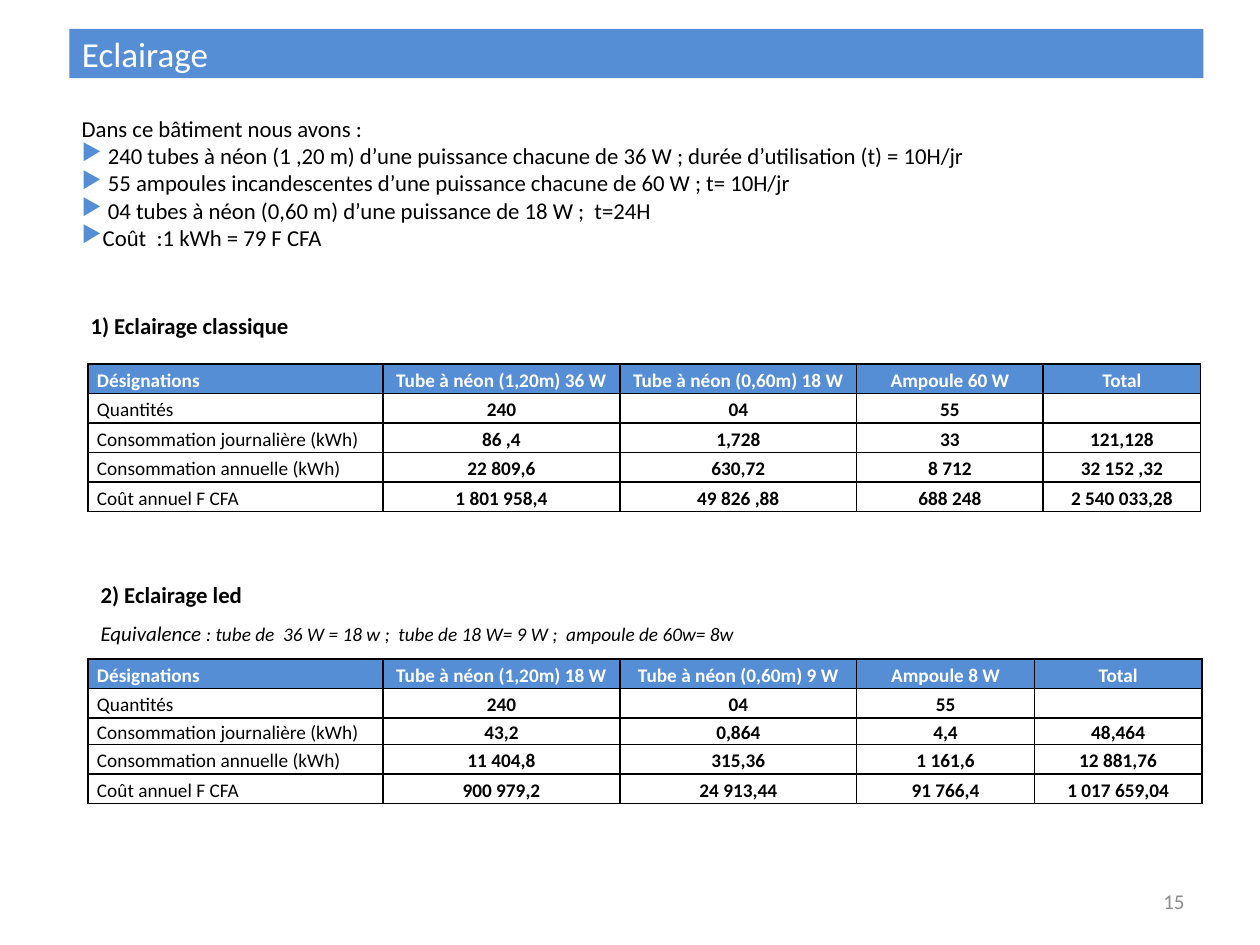
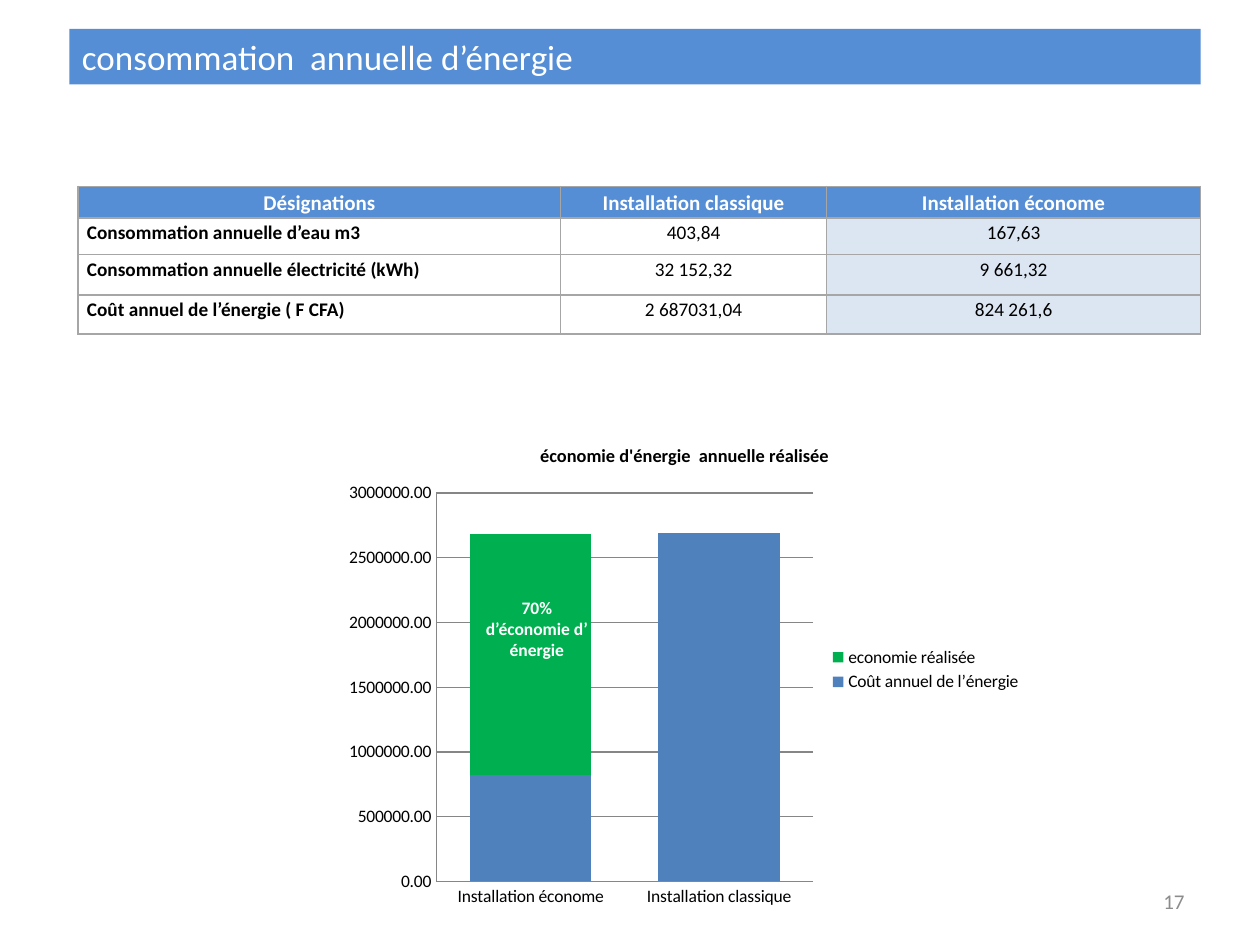
from lxml.etree import SubElement
from pptx import Presentation
from pptx.chart.data import CategoryChartData
from pptx.dml.color import RGBColor
from pptx.enum.chart import XL_CHART_TYPE, XL_LEGEND_POSITION, XL_TICK_MARK
from pptx.enum.text import MSO_ANCHOR, MSO_AUTO_SIZE, PP_ALIGN
from pptx.oxml.ns import qn
from pptx.util import Inches, Pt

FONT = "Calibri"
COLORS = {
    "band": "558ED5", "pale": "DCE6F2", "white": "FFFFFF", "black": "000000",
    "number": "8C8C8C", "border": "A6A6A6", "grid": "868686",
    "cost": "4F81BD", "saving": "00B050",
}

LABELS = ["Quantités", "Consommation journalière (kWh)",
          "Consommation annuelle (kWh)", "Coût annuel F CFA"]
CLASSIC = [
    ["Désignations", "Tube à néon (1,20m) 36 W", "Tube à néon (0,60m) 18 W",
     "Ampoule 60 W", "Total"],
    [LABELS[0], "240", "04", "55", ""],
    [LABELS[1], "86 ,4", "1,728", "33", "121,128"],
    [LABELS[2], "22 809,6", "630,72", "8 712", "32 152 ,32"],
    [LABELS[3], "1 801 958,4", "49 826 ,88", "688 248", "2 540 033,28"],
]
LED = [
    ["Désignations", "Tube à néon (1,20m) 18 W", "Tube à néon (0,60m) 9 W",
     "Ampoule 8 W", "Total"],
    [LABELS[0], "240", "04", "55", ""],
    [LABELS[1], "43,2", "0,864", "4,4", "48,464"],
    [LABELS[2], "11 404,8", "315,36", "1 161,6", "12 881,76"],
    [LABELS[3], "900 979,2", "24 913,44", "91 766,4", "1 017 659,04"],
]
ANNUAL = [
    ["Désignations", "Installation classique", "Installation économe"],
    ["Consommation annuelle d’eau m3", "403,84", "167,63"],
    ["Consommation annuelle électricité (kWh)", "32 152,32", "9 661,32"],
    ["Coût annuel de l’énergie ( F CFA)", "2 687031,04", "824 261,6"],
]
EQUIPMENT = [
    " 240 tubes à néon (1 ,20 m) d’une puissance chacune de 36 W ; durée d’utilisation (t) = 10H/jr",
    " 55 ampoules incandescentes d’une puissance chacune de 60 W ; t= 10H/jr",
    " 04 tubes à néon (0,60 m) d’une puissance de 18 W ;  t=24H",
    "Coût  :1 kWh = 79 F CFA",
]


def rgb(name):
    return RGBColor.from_string(COLORS[name])


def set_font(font, size, color="black", bold=False, italic=False):
    font.name, font.size = FONT, Pt(size)
    font.bold, font.italic = bold, italic
    font.color.rgb = rgb(color)


def add_run(p, text, size, color="black", bold=False, italic=False):
    r = p.add_run()
    r.text = text
    set_font(r.font, size, color, bold, italic)


def add_text(s, x, y, w, h, anchor=MSO_ANCHOR.TOP):
    """Add a wrapping text box and return its text frame."""
    tf = s.shapes.add_textbox(Inches(x), Inches(y), Inches(w), Inches(h)).text_frame
    tf.word_wrap = True
    tf.vertical_anchor = anchor
    return tf


def add_titled_slide(prs, title, number, w, h):
    s = prs.slides.add_slide(prs.slide_layouts[5])
    sp = s.shapes.title
    sp.left, sp.top, sp.width, sp.height = Inches(0.55), Inches(0.23), Inches(w), Inches(h)
    sp.fill.solid()
    sp.fill.fore_color.rgb = rgb("band")
    tf = sp.text_frame
    tf.auto_size = MSO_AUTO_SIZE.NONE
    tf.vertical_anchor = MSO_ANCHOR.MIDDLE
    p = tf.paragraphs[0]
    p.alignment = PP_ALIGN.LEFT
    add_run(p, title, 20, "white")

    p = add_text(s, 7.17, 6.95, 2.33, 0.4, MSO_ANCHOR.MIDDLE).paragraphs[0]
    p.alignment = PP_ALIGN.RIGHT
    add_run(p, number, 12, "number")
    return s


def add_bullet(p):
    pPr = p._p.get_or_add_pPr()
    color = SubElement(pPr, qn("a:buClr"))
    SubElement(color, qn("a:srgbClr"), val=COLORS["band"])
    SubElement(pPr, qn("a:buChar"), char="▶")


def add_borders(cell, color):
    tcPr = cell._tc.get_or_add_tcPr()
    for side in ("L", "R", "T", "B"):
        ln = SubElement(tcPr, qn(f"a:ln{side}"), w=str(Pt(1)))
        fill = SubElement(ln, qn("a:solidFill"))
        SubElement(fill, qn("a:srgbClr"), val=COLORS[color])


def format_cell(cell, text, align, anchor, border, fill, font):
    add_borders(cell, border)
    if fill:
        cell.fill.solid()
        cell.fill.fore_color.rgb = rgb(fill)
    else:
        cell.fill.background()
    cell.margin_left = cell.margin_right = Inches(0.07)
    cell.margin_top = cell.margin_bottom = 0
    cell.vertical_anchor = anchor
    p = cell.text_frame.paragraphs[0]
    p.alignment, p.line_spacing = align, 1.15
    if text:
        add_run(p, text, **font)
    else:
        SubElement(p._p, qn("a:endParaRPr"), sz=str(font["size"] * 100))


def add_grid(s, x, y, widths, heights, rows, border="black", anchor=MSO_ANCHOR.MIDDLE,
             head_size=11, bold_labels=False, last_fill=None):
    """Add a table with a coloured header; either labels or values are bold."""
    table = s.shapes.add_table(len(rows), len(widths), Inches(x), Inches(y),
                               Inches(sum(widths)), Inches(sum(heights))).table
    table.horz_banding = False
    for column, w in zip(table.columns, widths):
        column.width = Inches(w)
    for row, h in zip(table.rows, heights):
        row.height = Inches(h)
    for i, row in enumerate(rows):
        for j, text in enumerate(row):
            label = j == 0
            align = PP_ALIGN.LEFT if label else PP_ALIGN.CENTER
            if i == 0:
                fill = "band"
                font = dict(size=head_size, color="white", bold=True)
                if bold_labels:
                    align = PP_ALIGN.CENTER
            else:
                fill = last_fill if j == len(row) - 1 else None
                font = dict(size=11, bold=label == bold_labels)
            format_cell(table.cell(i, j), text, align, anchor, border, fill, font)


def add_saving_chart(s):
    data = CategoryChartData(number_format="0.00")
    data.categories = ["Installation économe", "Installation classique"]
    data.add_series("Coût annuel de l’énergie", (820000, 2690000))
    data.add_series("economie réalisée", (1860000, None))
    chart = s.shapes.add_chart(XL_CHART_TYPE.COLUMN_STACKED, Inches(2.66), Inches(3.36),
                               Inches(5.55), Inches(3.91), data).chart
    set_font(chart.font, 10)
    chart.has_title = True
    add_run(chart.chart_title.text_frame.paragraphs[0],
            "économie d'énergie  annuelle réalisée", 10.5, bold=True)
    chart.chart_title.include_in_layout = False
    chart.has_legend = True
    chart.legend.position = XL_LEGEND_POSITION.RIGHT
    chart.legend.include_in_layout = False

    plot = chart.plots[0]
    plot.gap_width, plot.overlap, plot.vary_by_categories = 55, 100, False
    for series, color in zip(plot.series, ("cost", "saving")):
        series.format.fill.solid()
        series.format.fill.fore_color.rgb = rgb(color)

    for axis in (chart.category_axis, chart.value_axis):
        axis.major_tick_mark = axis.minor_tick_mark = XL_TICK_MARK.NONE
        axis.format.line.color.rgb = rgb("grid")
    axis = chart.value_axis
    axis.minimum_scale, axis.maximum_scale, axis.major_unit = 0, 3000000, 500000
    axis.major_gridlines.format.line.color.rgb = rgb("grid")
    axis.tick_labels.number_format = "0.00"
    axis.tick_labels.number_format_is_linked = False


def build_lighting(prs):
    s = add_titled_slide(prs, "Eclairage", "15", 9, 0.39)

    tf = add_text(s, 0.55, 0.86, 8.98, 1.2)
    add_run(tf.paragraphs[0], "Dans ce bâtiment nous avons :", 13)
    for text in EQUIPMENT:
        p = tf.add_paragraph()
        add_bullet(p)
        add_run(p, text, 13)

    tf = add_text(s, 0.62, 2.42, 2.81, 0.32, MSO_ANCHOR.MIDDLE)
    add_run(tf.paragraphs[0], "1) Eclairage classique", 13, bold=True)
    row = 1.17 / 5
    add_grid(s, 0.7, 2.89, [2.34, 1.88, 1.88, 1.48, 1.25], [row] * 5, CLASSIC)

    tf = add_text(s, 0.7, 4.45, 8.83, 0.73)
    heading, note = tf.paragraphs[0], tf.add_paragraph()
    heading.line_spacing = note.line_spacing = 1.5
    add_run(heading, "2) Eclairage led", 13, bold=True)
    add_run(note, "Equivalence ", 12, italic=True)
    add_run(note, ": tube de  36 W = 18 w ;  tube de 18 W= 9 W ;  ampoule de 60w= 8w",
            11, italic=True)
    add_grid(s, 0.7, 5.23, [2.34, 1.88, 1.88, 1.41, 1.33], [row, row, 0.21, row, row], LED)


def build_consumption(prs):
    s = add_titled_slide(prs, "consommation  annuelle d’énergie", "17", 8.98, 0.44)
    add_grid(s, 0.62, 1.48, [3.83, 2.11, 2.97], [0.25, 0.29, 0.32, 0.31], ANNUAL,
             border="border", anchor=MSO_ANCHOR.TOP, head_size=12,
             bold_labels=True, last_fill="pale")
    add_saving_chart(s)
    p = add_text(s, 3.75, 4.69, 1.02, 0.61).paragraphs[0]
    p.alignment = PP_ALIGN.CENTER
    add_run(p, "70% d’économie d’ énergie", 10, "white", bold=True)


def main():
    prs = Presentation()
    prs.slide_width, prs.slide_height = Inches(10), Inches(7.5)
    build_lighting(prs)
    build_consumption(prs)
    prs.save("out.pptx")


if __name__ == "__main__":
    main()
